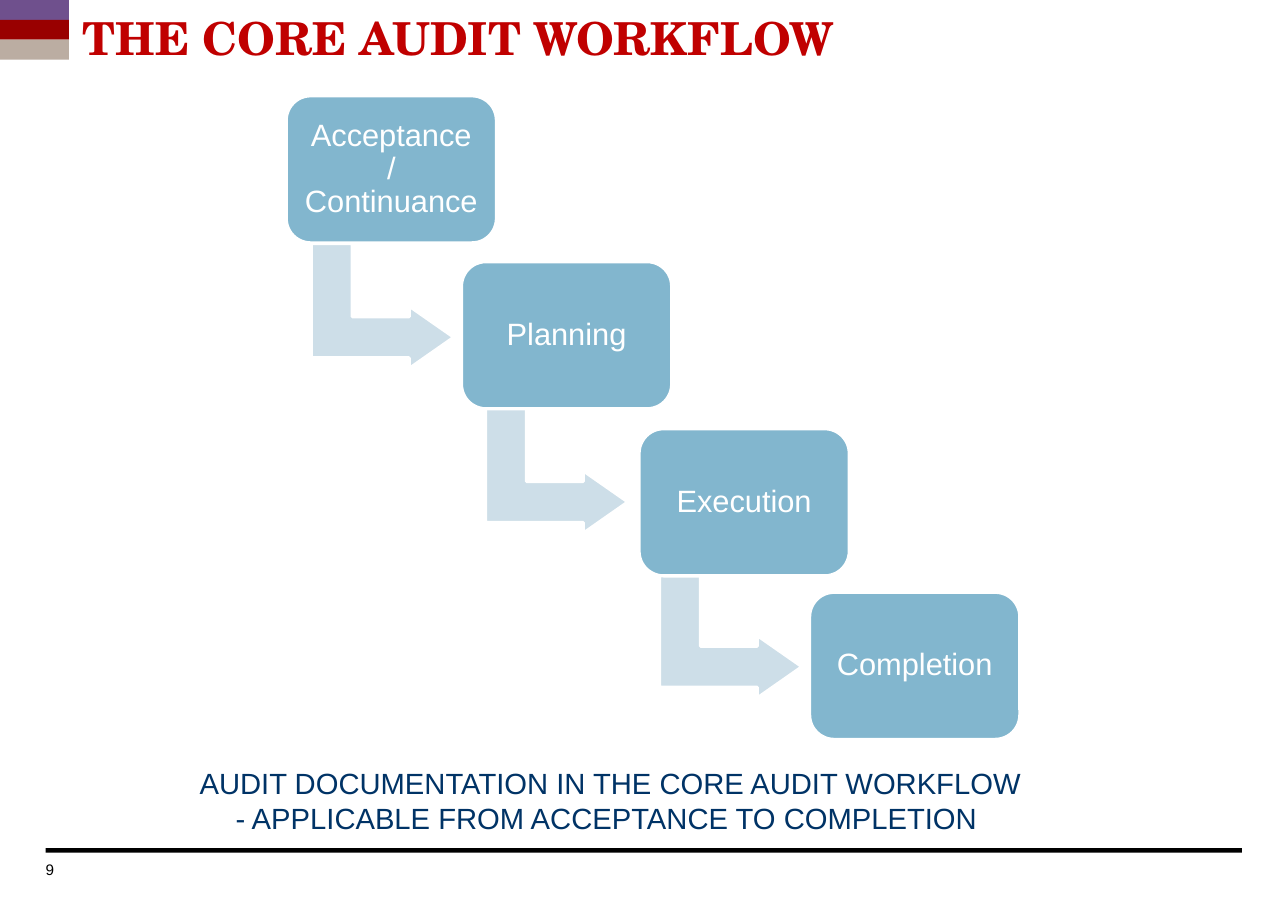
import pptx
import pptx.util
import pptx.dml.color
import pptx.enum.shapes
import pptx.enum.text
from dataclasses import dataclass

Inches, Pt = pptx.util.Inches, pptx.util.Pt
SHAPE = pptx.enum.shapes.MSO_SHAPE
ALIGN = pptx.enum.text.PP_ALIGN
ANCHOR = pptx.enum.text.MSO_ANCHOR
FIT = pptx.enum.text.MSO_AUTO_SIZE


@dataclass(frozen=True)
class Theme:
    title: str = "C00000"
    caption: str = "003366"
    step: str = "82B6CE"
    arrow: str = "CDDEE8"
    white: str = "FFFFFF"
    black: str = "000000"
    bands: tuple = ("6F508D", "990000", "BBADA2")
    title_font: str = "TeX Gyre Schola"
    body_font: str = "Arial"
    title_size: float = 28
    step_size: float = 19
    caption_size: float = 18
    number_size: float = 9.4


THEME = Theme()
STEPS = [
    ("Acceptance / Continuance", 2.45, 0.82),
    ("Planning", 3.95, 2.24),
    ("Execution", 5.47, 3.67),
    ("Completion", 6.93, 5.07),
]
CAPTION = [
    "AUDIT DOCUMENTATION IN THE CORE AUDIT WORKFLOW",
    "- APPLICABLE FROM ACCEPTANCE TO COMPLETION ",
]


def rgb(color):
    return pptx.dml.color.RGBColor.from_string(color)


def set_all(obj, values):
    for name, value in values.items():
        setattr(obj, name, value)


def write(sp, lines, size, color, inset=0.0, font=THEME.body_font, bold=False,
          anchor=ANCHOR.TOP, **para):
    tf = sp.text_frame
    margins = {f"margin_{side}": Inches(inset) for side in ("left", "top", "right", "bottom")}
    set_all(tf, {"word_wrap": True, "auto_size": FIT.NONE,
                 "vertical_anchor": anchor, **margins})
    for i, line in enumerate(lines):
        p = tf.paragraphs[0] if i == 0 else tf.add_paragraph()
        set_all(p, para)
        r = p.add_run()
        r.text = line
        set_all(r.font, {"name": font, "size": Pt(size), "bold": bold})
        r.font.color.rgb = rgb(color)


def add_block(s, kind, box, fill, line=None, adjust=()):
    sp = s.shapes.add_shape(kind, *map(Inches, box))
    sp.shadow.inherit = False
    sp.fill.solid()
    sp.fill.fore_color.rgb = rgb(fill)
    if line:
        sp.line.color.rgb = rgb(line)
        sp.line.width = Pt(2)
    else:
        sp.line.fill.background()
    for i, value in enumerate(adjust):
        sp.adjustments[i] = value
    return sp


def add_text(s, box, lines, size, color, **fmt):
    write(s.shapes.add_textbox(*map(Inches, box)), lines, size, color, **fmt)


def add_title(s, text):
    sp = s.shapes.title
    set_all(sp, {"left": Inches(0.71), "top": Inches(0.11),
                 "width": Inches(10.04), "height": Inches(0.68)})
    write(sp, [text], THEME.title_size, THEME.title, font=THEME.title_font, bold=True,
          alignment=ALIGN.LEFT, line_spacing=Pt(32.1))


def add_arrow(s, i):
    sp = add_block(s, SHAPE.BENT_UP_ARROW, (2.74 + 1.49 * i, 2.01 + 1.41 * i, 1.07, 1.22),
                   THEME.arrow, THEME.white, (0.328, 0.25, 0.358))
    sp.rotation = 90


def add_step(s, text, left, top):
    sp = add_block(s, SHAPE.ROUNDED_RECTANGLE, (left, top, 1.8, 1.26),
                   THEME.step, THEME.white, (0.167,))
    write(sp, [text], THEME.step_size, THEME.white, inset=0.08, anchor=ANCHOR.MIDDLE,
          alignment=ALIGN.CENTER, line_spacing=0.9)


def main():
    prs = pptx.Presentation()
    # 11.02 by 7.88 inches, exact in points
    prs.slide_width = Pt(793.75)
    prs.slide_height = Pt(567)
    s = prs.slides.add_slide(prs.slide_layouts[5])

    # Page frame: footer rule, corner bands, page number
    add_block(s, SHAPE.RECTANGLE, (0.39, 7.26, 10.24, 0.04), THEME.black)
    for i, color in enumerate(THEME.bands):
        add_block(s, SHAPE.RECTANGLE, (0, 0.17 * i, 0.59, 0.17), color)
    add_text(s, (0.39, 7.36, 0.79, 0.2), ["9"], THEME.number_size, THEME.black)

    add_title(s, "THE CORE AUDIT WORKFLOW")

    # Staircase of steps, an arrow leading to each next one
    for i, step in enumerate(STEPS):
        if i < len(STEPS) - 1:
            add_arrow(s, i)
        add_step(s, *step)

    # Caption
    add_text(s, (1.42, 6.5, 7.61, 0.71), CAPTION, THEME.caption_size, THEME.caption,
             inset=0.05, alignment=ALIGN.CENTER)

    prs.save("out.pptx")


if __name__ == "__main__":
    main()
